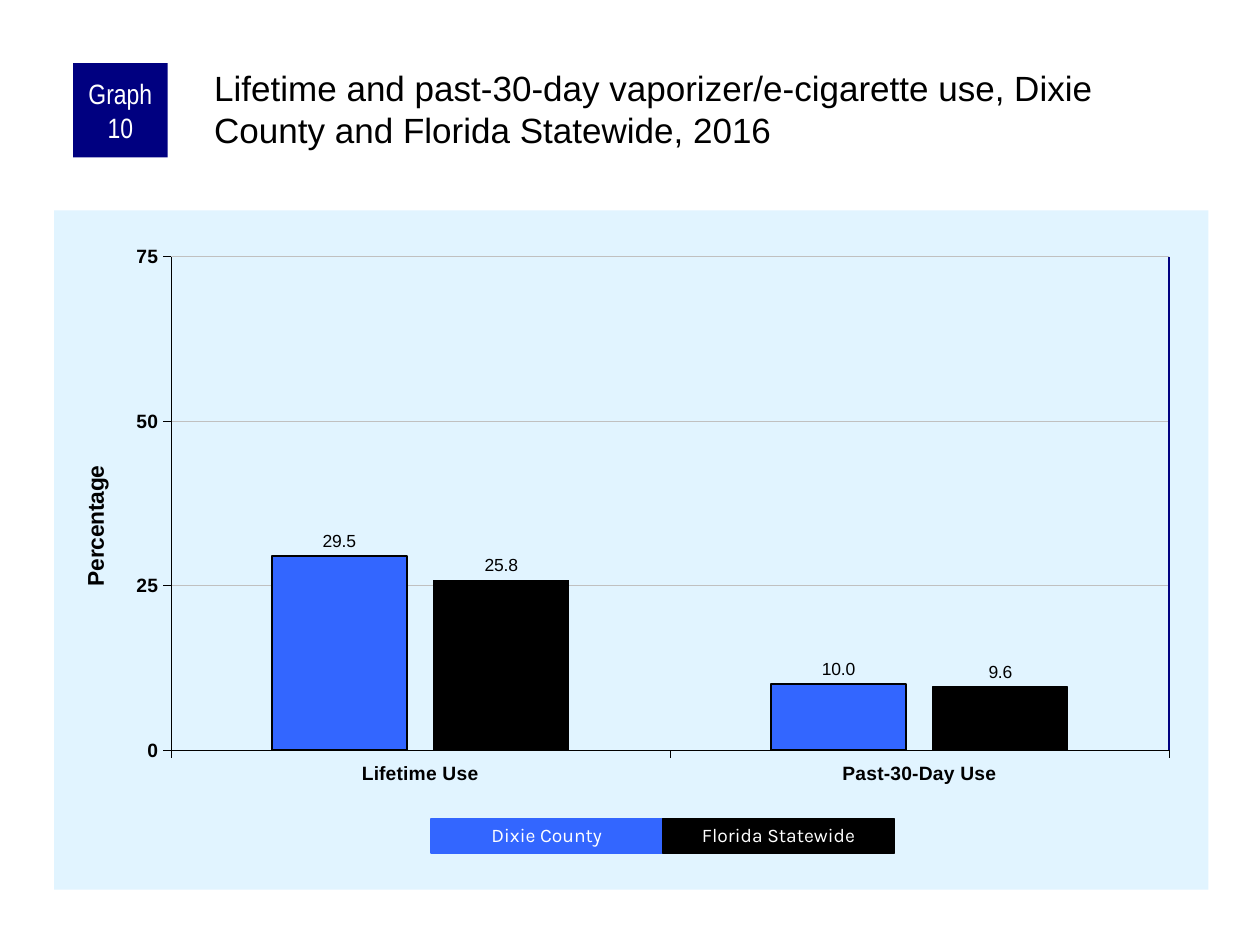
import pptx
import pptx.chart.data
import pptx.dml.color
import pptx.enum.chart
import pptx.enum.shapes
import pptx.enum.text
import pptx.oxml
import pptx.oxml.ns
import pptx.util

WIDE, HIGH = 10, 7.5
TITLE = ("Lifetime and past-30-day vaporizer/e-cigarette use, "
         "Dixie County and Florida Statewide, 2016")
BADGE = "Graph 10"
CATS = ["Lifetime Use", "Past-30-Day Use"]
SERIES = [  # name, values, colour, outline width
    ("Dixie County", (29.5, 10), "3366FF", 1),
    ("Florida Statewide", (25.8, 9.6), "000000", 0.75),
]
NAVY, BLACK, WHITE = "000080", "000000", "FFFFFF"
CHART = (0.43, 1.67, 9.16, 5.39)
PLOT = (0.101, 0.068, 0.865, 0.727)  # shares of the chart's size
KEY = (3.42, 6.5, 1.84, 0.27)

Inch, Pt = pptx.util.Inches, pptx.util.Pt
qn = pptx.oxml.ns.qn
ALIGN = pptx.enum.text.PP_ALIGN
ANCHOR = pptx.enum.text.MSO_ANCHOR
XL = pptx.enum.chart
RECT = pptx.enum.shapes.MSO_SHAPE.RECTANGLE


def color(code):
    return pptx.dml.color.RGBColor.from_string(code)


def fill(part, code):
    part.fill.solid()
    part.fill.fore_color.rgb = color(code)


def stroke(line, code, width):
    line.color.rgb = color(code)
    line.width = Pt(width)


def style(font, size, code=BLACK, name="Arial", bold=False):
    font.size, font.name, font.bold = Pt(size), name, bold
    font.color.rgb = color(code)


def write(shape, text, inset, align=ALIGN.CENTER, anchor=ANCHOR.MIDDLE,
          space=1, **font):
    frame = shape.text_frame
    frame.word_wrap = True
    frame.auto_size = pptx.enum.text.MSO_AUTO_SIZE.NONE
    frame.vertical_anchor = anchor
    (frame.margin_left, frame.margin_top,
     frame.margin_right, frame.margin_bottom) = map(Inch, inset)
    para = frame.paragraphs[0]
    para.alignment, para.line_spacing = align, space
    run = para.add_run()
    run.text = text
    style(run.font, **font)


def box(slide, place, code):
    shape = slide.shapes.add_shape(RECT, *map(Inch, place))
    shape.shadow.inherit = False
    fill(shape, code)
    shape.line.fill.background()
    return shape


def layout(**spots):
    """Return a manual chart layout; spots are shares of the chart's size."""
    inner = '<c:layoutTarget val="inner"/>' if "w" in spots else ""
    modes = '<c:xMode val="edge"/><c:yMode val="edge"/>'
    sizes = "".join(f'<c:{k} val="{v}"/>' for k, v in spots.items())
    return pptx.oxml.parse_xml(
        f'<c:layout {pptx.oxml.ns.nsdecls("c")}><c:manualLayout>'
        f'{inner}{modes}{sizes}</c:manualLayout></c:layout>')


def place_part(node, index, **spots):
    for old in node.findall(qn("c:layout")):
        node.remove(old)
    node.insert(index, layout(**spots))


def add_chart(slide):
    data = pptx.chart.data.CategoryChartData(number_format="0.0")
    data.categories = CATS
    for name, values, *_ in SERIES:
        data.add_series(name, values)
    chart = slide.shapes.add_chart(
        XL.XL_CHART_TYPE.COLUMN_CLUSTERED, *map(Inch, CHART), data).chart
    chart.has_title = chart.has_legend = False
    style(chart.font, 11.5)

    body = chart.element.find(qn("c:chart"))
    body.addnext(pptx.oxml.parse_xml(
        f'<c:spPr {pptx.oxml.ns.nsdecls("c", "a")}><a:solidFill>'
        '<a:srgbClr val="E1F4FF"/></a:solidFill>'
        '<a:ln><a:noFill/></a:ln></c:spPr>'))
    place_part(body.find(qn("c:plotArea")), 0, **dict(zip("xywh", PLOT)))

    for axis in (chart.category_axis, chart.value_axis):
        axis.major_tick_mark = XL.XL_TICK_MARK.OUTSIDE
        axis.minor_tick_mark = XL.XL_TICK_MARK.NONE
        style(axis.tick_labels.font, 11, bold=True)
        stroke(axis.format.line, BLACK, 0.25)
    axis = chart.value_axis
    axis.minimum_scale, axis.maximum_scale, axis.major_unit = 0, 75, 25
    axis.tick_labels.number_format = "0"
    axis.tick_labels.number_format_is_linked = False
    stroke(axis.major_gridlines.format.line, "C0C0C0", 0.25)
    run = axis.axis_title.text_frame.paragraphs[0].add_run()
    run.text = "Percentage"
    style(run.font, 13, bold=True)
    place_part(axis.axis_title.element, 1, x=0.02, y=0.37)

    plot = chart.plots[0]
    plot.gap_width, plot.overlap, plot.vary_by_categories = 150, -20, False
    for bars, (_, _, code, width) in zip(plot.series, SERIES):
        fill(bars.format, code)
        stroke(bars.format.line, BLACK, width)
        labels = bars.data_labels
        labels.show_value = True
        labels.number_format, labels.number_format_is_linked = "0.0", False
        labels.position = XL.XL_LABEL_POSITION.OUTSIDE_END
        style(labels.font, 10)


def add_edge(slide):
    """Draw the navy line on the right side of the plot."""
    left, top, wide, high = CHART
    x = left + (PLOT[0] + PLOT[2]) * wide
    y = top + PLOT[1] * high
    edge = slide.shapes.add_connector(
        pptx.enum.shapes.MSO_CONNECTOR.STRAIGHT,
        *map(Inch, (x, y, x, y + PLOT[3] * high)))
    stroke(edge.line, NAVY, 1)
    edge.element.spPr.append(pptx.oxml.parse_xml(
        f'<a:effectLst {pptx.oxml.ns.nsdecls("a")}/>'))


def main():
    deck = pptx.Presentation()
    deck.slide_width, deck.slide_height = Inch(WIDE), Inch(HIGH)
    slide = deck.slides.add_slide(deck.slide_layouts[5])
    add_chart(slide)
    add_edge(slide)

    write(box(slide, (0.58, 0.5, 0.75, 0.75), NAVY), BADGE,
          (0.05, 0, 0.05, 0), size=16, code=WHITE, name="Arial Narrow")

    title = slide.shapes.title
    title.left, title.top, title.width, title.height = map(
        Inch, (1.67, 0.5, 7.92, 0.83))
    write(title, TITLE, (0.03, 0.03, 0, 0), align=ALIGN.LEFT,
          anchor=ANCHOR.TOP, size=20)

    left, top, wide, high = KEY
    for i, (name, _, code, _) in enumerate(SERIES):
        key = box(slide, (left + i * wide, top, wide, high), code)
        stroke(key.line, code, 0.75)
        write(key, name, (0.1, 0.05, 0.1, 0.05), space=0.9,
              size=11, code=WHITE, name="Karla")
    deck.save("out.pptx")


if __name__ == "__main__":
    main()
